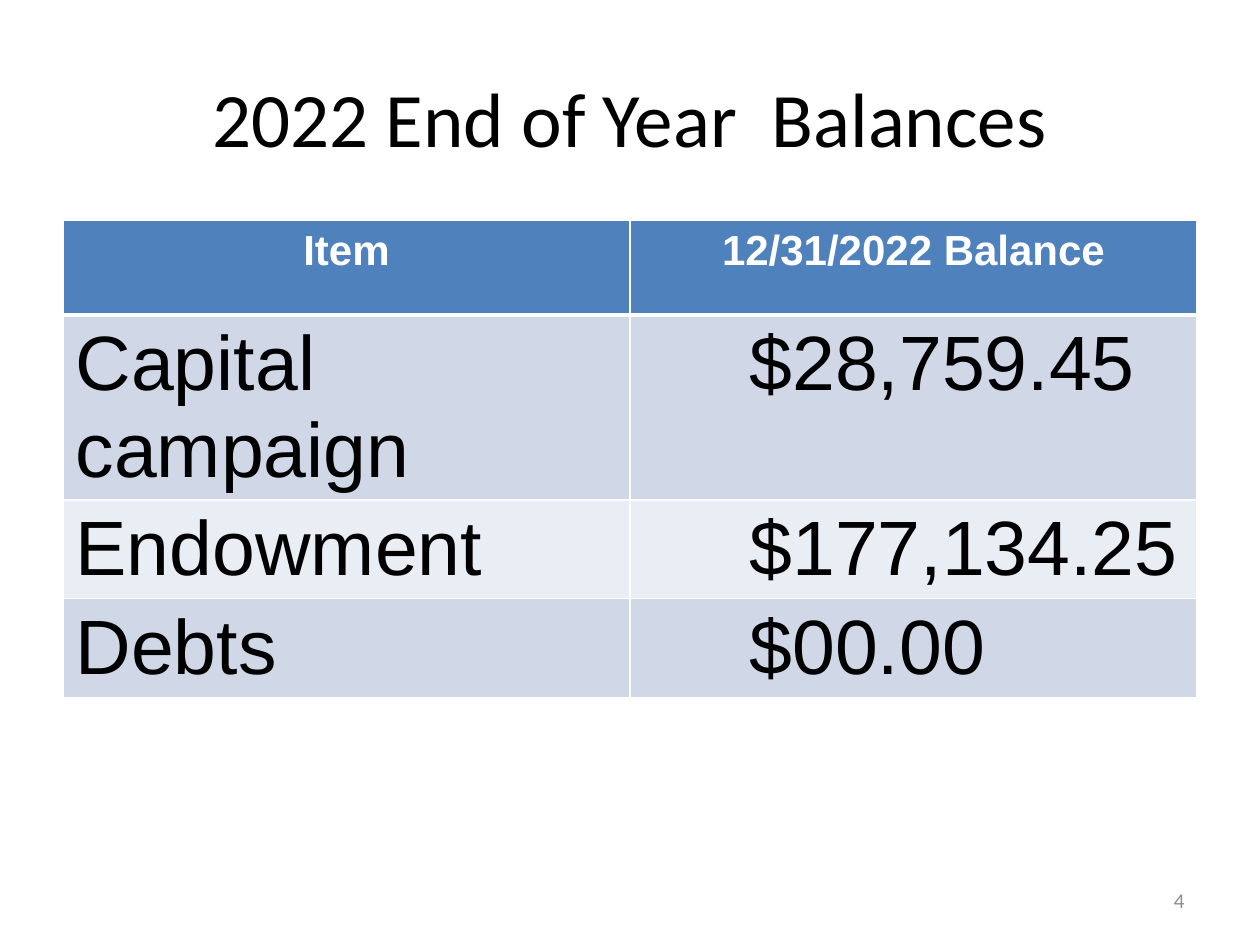
from lxml import etree
from pptx import Presentation
from pptx.dml.color import RGBColor
from pptx.enum.text import MSO_ANCHOR, PP_ALIGN
from pptx.oxml.ns import qn
from pptx.util import Cm, Pt

LEFT, CENTER, RIGHT = PP_ALIGN.LEFT, PP_ALIGN.CENTER, PP_ALIGN.RIGHT
MIDDLE = MSO_ANCHOR.MIDDLE

BLACK = RGBColor(0x00, 0x00, 0x00)
WHITE = RGBColor(0xFF, 0xFF, 0xFF)
GRAY = RGBColor(0x8C, 0x8C, 0x8C)
BLUE = RGBColor(0x4F, 0x81, 0xBD)
BANDS = [RGBColor(0xD0, 0xD8, 0xE8), RGBColor(0xE9, 0xED, 0xF4)]

HEADERS = ["Item", "12/31/2022 Balance"]
BALANCES = [
    ["Capital campaign", "$28,759.45"],
    ["Endowment", "$177,134.25"],
    ["Debts", "$00.00"],
]


class Deck:
    """Holds the fonts and the current slide."""

    heading_font = "Calibri"
    table_font = "Arial"

    def __init__(self):
        self.prs = Presentation()
        self.prs.slide_width, self.prs.slide_height = Cm(25.4), Cm(19.05)
        self.s = self.prs.slides.add_slide(self.prs.slide_layouts[5])

    def set_text(self, tf, text, font, size, color, align, bold=False):
        p = tf.paragraphs[0]
        p.text, p.alignment = text, align
        p.font.name, p.font.size, p.font.bold = font, Pt(size), bold
        p.font.color.rgb = color

    def title(self, text, x, y, w, h):
        sp = self.s.shapes.title
        sp.left, sp.top, sp.width, sp.height = Cm(x), Cm(y), Cm(w), Cm(h)
        sp.text_frame.vertical_anchor = MIDDLE
        self.set_text(sp.text_frame, text, self.heading_font, 44, BLACK, CENTER)

    def label(self, text, x, y, w, h):
        sp = self.s.shapes.add_textbox(Cm(x), Cm(y), Cm(w), Cm(h))
        tf = sp.text_frame
        tf.word_wrap, tf.vertical_anchor = True, MIDDLE
        self.set_text(tf, text, self.heading_font, 12, GRAY, RIGHT)

    def borders(self, cell, bottom):
        tcPr = cell._tc.get_or_add_tcPr()
        for side, width in (("L", 1), ("R", 1), ("T", 1), ("B", bottom)):
            ln = etree.SubElement(tcPr, qn(f"a:ln{side}"), w=str(Pt(width)))
            fill = etree.SubElement(ln, qn("a:solidFill"))
            etree.SubElement(fill, qn("a:srgbClr"), val=str(WHITE))

    def table(self, headers, rows, x, y, w, heights, indent):
        shape = self.s.shapes.add_table(len(rows) + 1, len(headers),
                                        Cm(x), Cm(y), Cm(w), Cm(sum(heights)))
        tbl = shape.table
        for row, height in zip(tbl.rows, heights):
            row.height = Cm(height)
        for i, values in enumerate([headers] + rows):
            for j, text in enumerate(values):
                cell, head = tbl.cell(i, j), i == 0
                self.borders(cell, 3 if head else 1)
                cell.fill.solid()
                cell.fill.fore_color.rgb = BLUE if head else BANDS[(i - 1) % 2]
                if j and not head:
                    cell.margin_left = Cm(indent)
                size, color, align = (24, WHITE, CENTER) if head else (44, BLACK, LEFT)
                self.set_text(cell.text_frame, text, self.table_font,
                              size, color, align, head)


def main():
    deck = Deck()
    # Heading
    deck.title("2022 End of Year  Balances", 1.27, 0.76, 22.86, 3.18)
    # Balances, with the amounts indented
    deck.table(HEADERS, BALANCES, 1.27, 4.45, 22.86, [1.9, 3.7, 1.98, 1.98], 2.41)
    # Page number
    deck.label("4", 18.2, 17.65, 5.93, 1.01)
    deck.prs.save("out.pptx")


if __name__ == "__main__":
    main()
